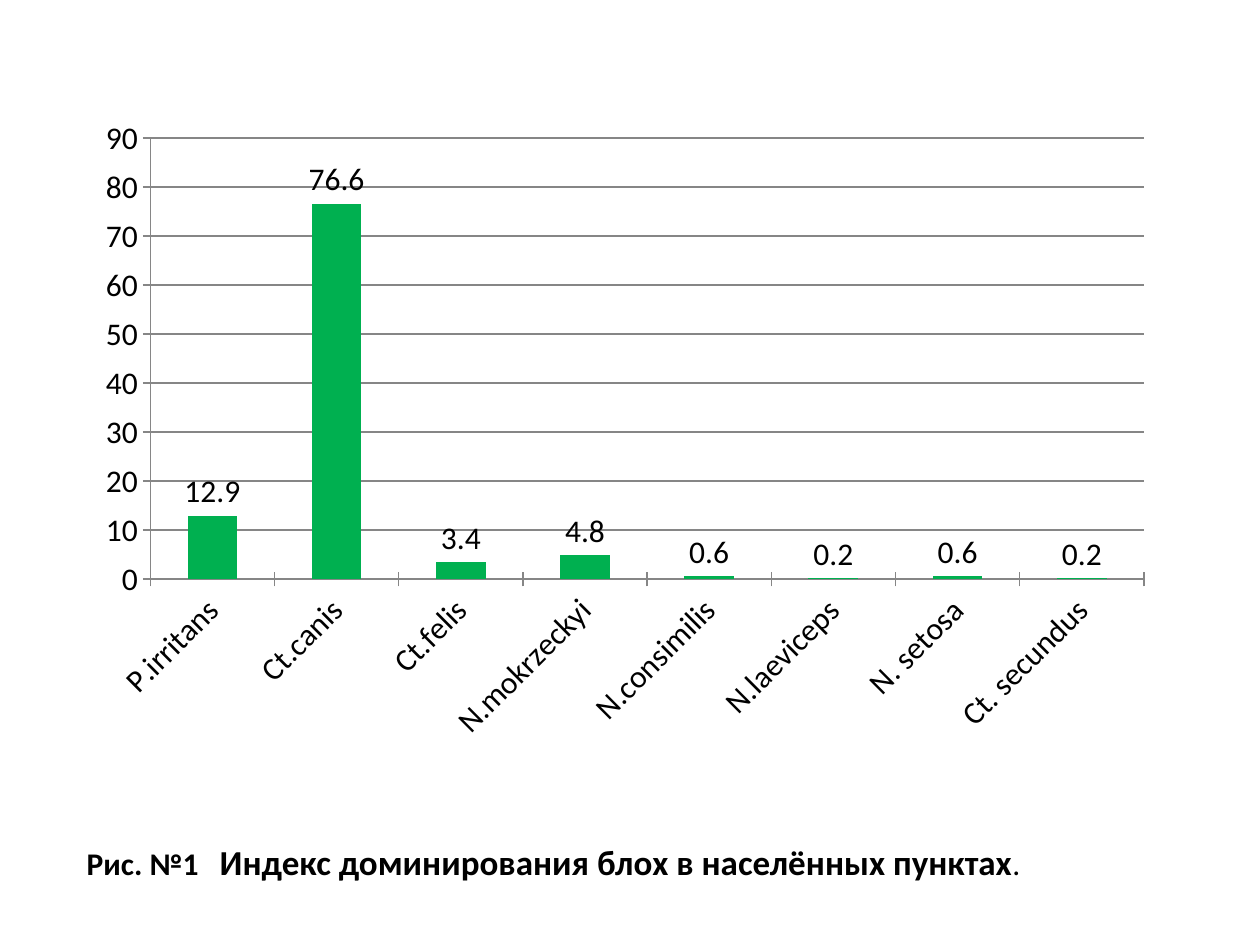
from lxml.etree import SubElement
from pptx import Presentation
from pptx.chart.data import CategoryChartData as ChartData
from pptx.dml.color import RGBColor
from pptx.enum.chart import XL_CHART_TYPE as ChartType
from pptx.enum.chart import XL_LABEL_POSITION as LabelPosition
from pptx.enum.chart import XL_TICK_MARK as TickMark
from pptx.enum.text import MSO_AUTO_SIZE as AutoSize
from pptx.oxml.ns import qn
from pptx.util import Pt

FONT = "Calibri"
BLACK, GREEN, GREY = "000000", "00B050", "868686"
FLEA_INDEX = {
    "P.irritans": 12.9,
    "Ct.canis": 76.6,
    "Ct.felis": 3.4,
    "N.mokrzeckyi": 4.8,
    "N.consimilis": 0.6,
    "N.laeviceps": 0.2,
    "N. setosa": 0.6,
    "Ct. secundus": 0.2,
}
CAPTION = [
    ("Рис. №1\t", 18, True),
    ("Индекс доминирования блох в населённых пунктах", 20, True),
    (".", 18, False),
]


def set_values(target, values):
    """Set every attribute named in a dict of format values."""
    for name, value in values.items():
        setattr(target, name, value)


def set_color(color_format, color):
    """Apply a hex colour to a colour format."""
    color_format.rgb = RGBColor.from_string(color)


def format_font(font, size, bold=False):
    """Give a font the slide's typeface, colour, size and weight."""
    set_values(font, {"name": FONT, "size": Pt(size), "bold": bold})
    set_color(font.color, BLACK)


def format_line(line):
    """Draw an axis or gridline as a thin grey line."""
    line.width = Pt(0.75)
    set_color(line.color, GREY)


def format_axis(axis, values):
    """Format an axis with its line, ticks and labels."""
    set_values(axis, {"major_tick_mark": TickMark.CROSS,
                      "minor_tick_mark": TickMark.NONE, **values})
    format_line(axis.format.line)
    format_font(axis.tick_labels.font, 18)


def slant_labels(axis, degrees):
    """Rotate the tick labels of an axis."""
    body = axis.format.line and axis._element.find(f"{qn('c:txPr')}/{qn('a:bodyPr')}")
    body.set("rot", str(degrees * 60000))
    body.set("vert", "horz")


def add_index_chart(slide, left, top, width, height):
    """Add the column chart of flea dominance."""
    data = ChartData()
    data.categories = FLEA_INDEX.keys()
    data.add_series("Series 1", FLEA_INDEX.values())
    chart = slide.shapes.add_chart(
        ChartType.COLUMN_CLUSTERED, Pt(left), Pt(top), Pt(width), Pt(height), data).chart
    set_values(chart, {"has_legend": False, "has_title": False})
    format_font(chart.font, 18)

    format_axis(chart.category_axis, {"has_major_gridlines": False})
    slant_labels(chart.category_axis, -45)
    format_axis(chart.value_axis, {"has_major_gridlines": True, "minimum_scale": 0,
                                   "maximum_scale": 90, "major_unit": 10})
    format_line(chart.value_axis.major_gridlines.format.line)

    plot = chart.plots[0]
    set_values(plot, {"gap_width": 150, "vary_by_categories": False,
                      "has_data_labels": True})
    set_values(plot.data_labels, {"show_value": True,
                                  "position": LabelPosition.OUTSIDE_END})
    format_font(plot.data_labels.font, 18)
    fill = plot.series[0].format.fill
    fill.solid()
    set_color(fill.fore_color, GREEN)


def add_tab_stop(paragraph, position):
    """Add a left tab stop to a paragraph."""
    tabs = SubElement(paragraph._p.get_or_add_pPr(), qn("a:tabLst"))
    SubElement(tabs, qn("a:tab"), pos=str(Pt(position)), algn="l")


def add_caption(slide, left, top, width, height):
    """Add the figure caption with its mixed runs."""
    box = slide.shapes.add_textbox(Pt(left), Pt(top), Pt(width), Pt(height))
    set_values(box.text_frame, {"word_wrap": False,
                                "auto_size": AutoSize.SHAPE_TO_FIT_TEXT})
    paragraph = box.text_frame.paragraphs[0]
    add_tab_stop(paragraph, 76)
    for text, size, bold in CAPTION:
        run = paragraph.add_run()
        run.text = text
        format_font(run.font, size, bold)


def main():
    """Build and save the slide."""
    presentation = Presentation()
    set_values(presentation, {"slide_width": Pt(720), "slide_height": Pt(540)})
    slide = presentation.slides.add_slide(presentation.slide_layouts[6])
    add_caption(slide, 42.5, 476.6, 548, 31.5)
    add_index_chart(slide, 48.2, 60.5, 617.8, 370)
    presentation.save("out.pptx")


if __name__ == "__main__":
    main()
